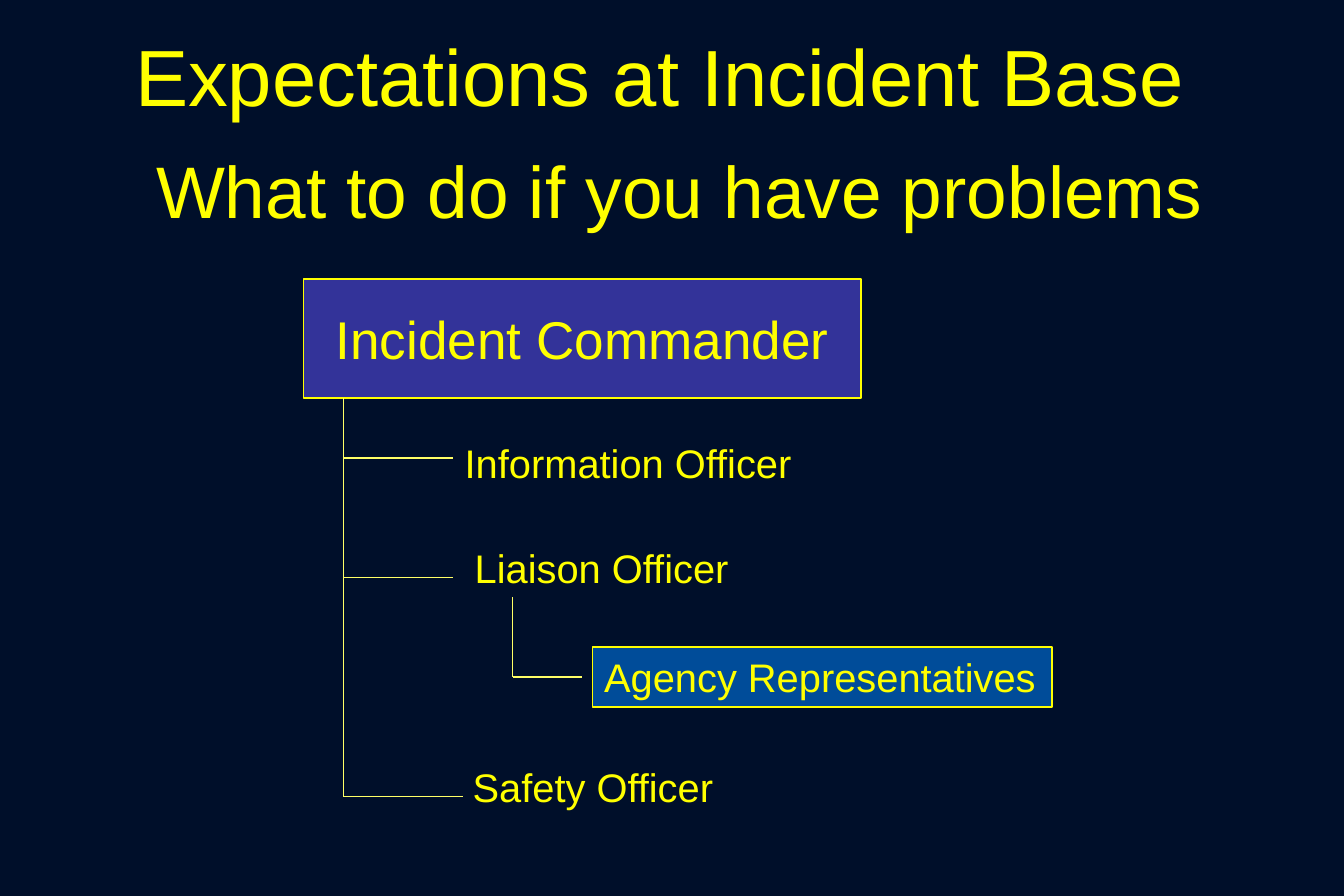
from pptx import Presentation, util as u
from pptx.dml.color import RGBColor
from pptx.enum import shapes, text
from pptx.oxml.ns import qn
from lxml import etree

WIDTH, HEIGHT = 11.25, 7.5
COLUMNS, ROWS = 135, 90
COLORS = {"back": "000F2A", "text": "FFFF00", "line": "FFFF66",
          "commander": "333399", "agency": "004C99"}

HEADINGS = [
    ("Expectations at Incident Base ", (10, 0, 114.75, 15),
     {"size": 48, "centered": True, "middle": True}),
    ("What to do if you have problems", (14.5, 14, 108.7, 10.1), {"size": 44}),
]
ROLES = [
    ("Incident Commander", (30.5, 28, 56, 12),
     {"size": 32, "fill": "commander", "centered": True, "middle": True}),
    ("Information Officer", (45.5, 43.5, 35.5, 6), {}),
    ("Liaison Officer", (46.5, 54, 28.2, 6), {}),
    ("Agency Representatives", (59.5, 65, 46.2, 6), {"fill": "agency"}),
    ("Safety Officer", (46.3, 76, 26.8, 6), {}),
]
BRANCHES = [
    {"trunk": 34.5, "top": 40, "twigs": [(46.5, 80), (45.5, 58), (45.5, 46)]},
    {"trunk": 51.5, "top": 60, "twigs": [(58.5, 68)]},
]

deck = Presentation()
deck.slide_width, deck.slide_height = u.Inches(WIDTH), u.Inches(HEIGHT)
page = deck.slides.add_slide(deck.slide_layouts[6])


def color(name):
    return RGBColor.from_string(COLORS[name])


def across(columns):
    return round(deck.slide_width * columns / COLUMNS)


def down(rows):
    return round(deck.slide_height * rows / ROWS)


def add_label(words, place, size=24, fill=None, centered=False, middle=False):
    left, top, width, height = place
    area = across(left), down(top), across(width), down(height)
    if fill:
        box = page.shapes.add_shape(shapes.MSO_SHAPE.RECTANGLE, *area)
        box.shadow.inherit = False
        box.fill.solid()
        box.fill.fore_color.rgb = color(fill)
        box.line.color.rgb = color("text")
        box.line.width = u.Pt(1)
    else:
        box = page.shapes.add_textbox(*area)
    frame = box.text_frame
    frame.word_wrap = False
    frame.vertical_anchor = text.MSO_ANCHOR.MIDDLE if middle else text.MSO_ANCHOR.TOP
    para = frame.paragraphs[0]
    para.alignment = text.PP_ALIGN.CENTER if centered else text.PP_ALIGN.LEFT
    span = para.add_run()
    span.text = words
    span.font.name = "Arial"
    span.font.size = u.Pt(size)
    span.font.color.rgb = color("text")


def add_line(left, top, right, bottom):
    line = page.shapes.add_connector(
        shapes.MSO_CONNECTOR.STRAIGHT, across(left), down(top), across(right), down(bottom))
    line.line.color.rgb = color("line")
    line.line.width = u.Pt(1)
    etree.SubElement(line.element.spPr, qn("a:effectLst"))


page.background.fill.solid()
page.background.fill.fore_color.rgb = color("back")

for words, place, style in HEADINGS + ROLES:
    add_label(words, place, **style)

for branch in BRANCHES:
    trunk = branch["trunk"]
    lowest = max(row for _, row in branch["twigs"])
    add_line(trunk, branch["top"], trunk, lowest)
    for end, row in branch["twigs"]:
        add_line(trunk, row, end, row)

deck.save("out.pptx")
